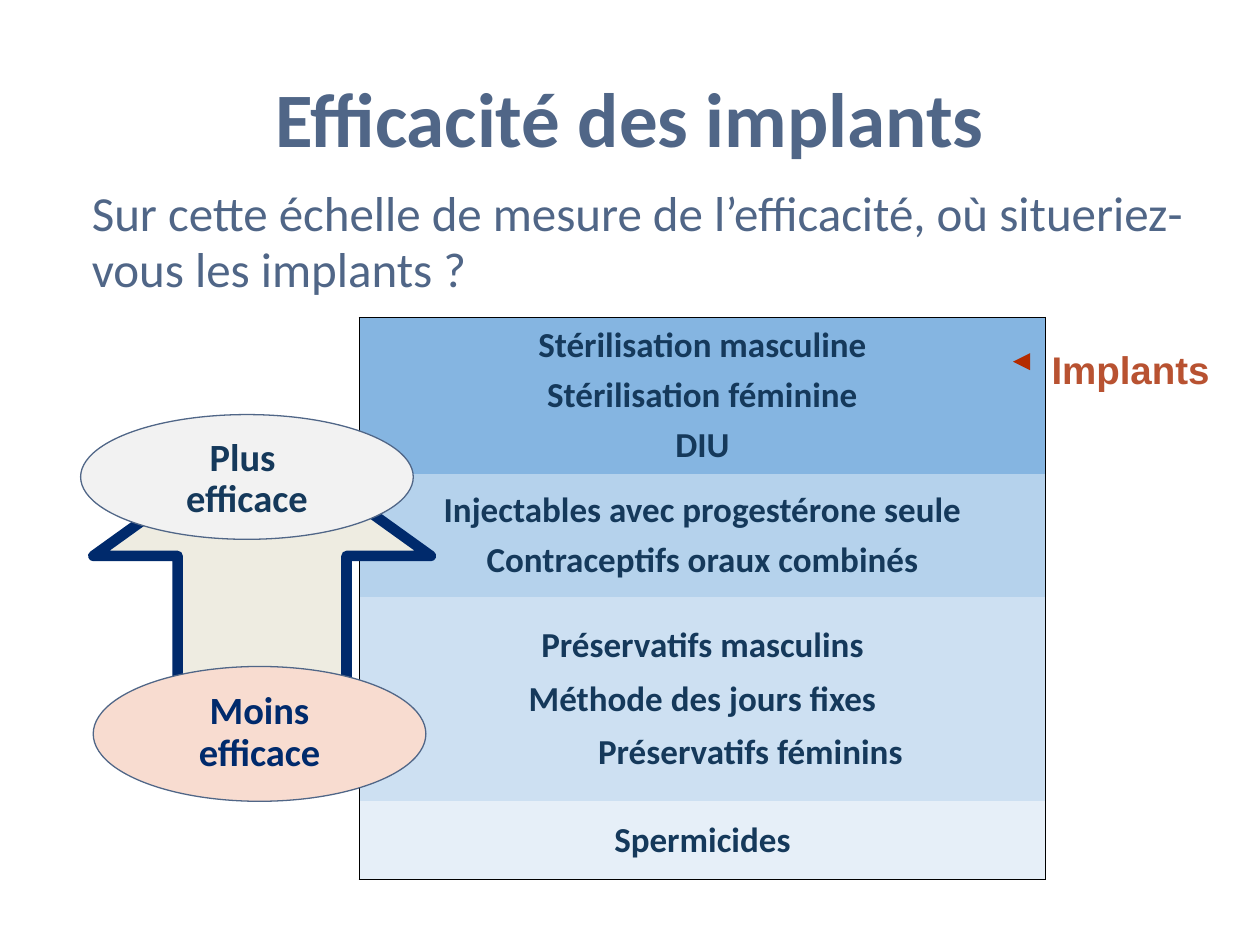
import pptx
import pptx.util
import pptx.dml.color
import pptx.enum.shapes
import pptx.enum.text
import pptx.oxml
import pptx.oxml.ns
import lxml.etree

WIDE, HIGH = 10, 7.5
NAVY, SLATE, INK = "002A6C", "506687", "15395B"
KIND = pptx.enum.shapes.MSO_SHAPE
MID = pptx.enum.text.PP_ALIGN.CENTER
ANCHOR = pptx.enum.text.MSO_ANCHOR
qn = pptx.oxml.ns.qn


def tint(code):
    """Turn a hex string into a colour."""
    return pptx.dml.color.RGBColor.from_string(code)


def across(share):
    """Give a percentage of the slide's width."""
    return pptx.util.Inches(WIDE * share / 100)


def down(share):
    """Give a percentage of the slide's height."""
    return pptx.util.Inches(HIGH * share / 100)


def place(box):
    """Turn left, top, width and height shares into lengths."""
    left, top, width, height = box
    return across(left), down(top), across(width), down(height)


def write(para, text, size, code, bold=True, face="Calibri"):
    """Add one run to a paragraph."""
    run = para.add_run()
    run.text = text
    font = run.font
    font.size, font.bold, font.name = pptx.util.Pt(size), bold, face
    font.color.rgb = tint(code)


def label(slide, box, anchor=ANCHOR.TOP):
    """Add a wrapping text box and return its first paragraph."""
    frame = slide.shapes.add_textbox(*place(box)).text_frame
    frame.word_wrap = True
    frame.vertical_anchor = anchor
    return frame.paragraphs[0]


def solid(slide, kind, box, fill, line, weight):
    """Add a filled and outlined preset shape."""
    shape = slide.shapes.add_shape(kind, *place(box))
    shape.shadow.inherit = False
    shape.fill.solid()
    shape.fill.fore_color.rgb = tint(fill)
    shape.line.color.rgb = tint(line)
    shape.line.width = pptx.util.Pt(weight)
    return shape


def oval(slide, box, fill, words, code):
    """Add an ellipse with words on two lines."""
    shape = solid(slide, KIND.OVAL, box, fill, SLATE, 0.75)
    frame = shape.text_frame
    frame.word_wrap = True
    frame.vertical_anchor = ANCHOR.TOP
    frame.margin_left = frame.margin_right = pptx.util.Inches(0.07)
    frame.margin_top = frame.margin_bottom = pptx.util.Inches(0.04)
    para = frame.paragraphs[0]
    para.alignment, para.line_spacing = MID, 0.9
    write(para, words[0], 22, code)
    para.add_line_break()
    write(para, words[1], 22, code)


def edge(cell, shown):
    """Draw the named sides of a cell and hide the others."""
    props = cell._tc.get_or_add_tcPr()
    for spot, side in enumerate("LRTB"):
        line = lxml.etree.Element(qn(f"a:ln{side}"), w="9525")
        if side in shown:
            fill = lxml.etree.SubElement(line, qn("a:solidFill"))
            lxml.etree.SubElement(fill, qn("a:srgbClr"), val="000000")
        else:
            lxml.etree.SubElement(line, qn("a:noFill"))
        props.insert(spot, line)


def scale(slide, left, top, width, bands):
    """Add the ranked table, one band per row."""
    total = sum(band[0] for band in bands)
    box = place((left, top, width, total))
    table = slide.shapes.add_table(len(bands), 1, *box).table
    table.first_row = table.horz_banding = False
    for row, (height, fill, gap, lines) in enumerate(bands):
        table.rows[row].height = down(height)
        cell = table.cell(row, 0)
        cell.fill.solid()
        cell.fill.fore_color.rgb = tint(fill)
        cell.vertical_anchor = ANCHOR.MIDDLE
        top_side = "T" if row == 0 else ""
        base = "B" if row == len(bands) - 1 else ""
        edge(cell, "LR" + top_side + base)
        frame = cell.text_frame
        for spot, (text, inset) in enumerate(lines):
            para = frame.add_paragraph() if spot else frame.paragraphs[0]
            para.alignment = MID
            if spot:
                para.space_before = pptx.util.Pt(gap)
            if inset:
                para._p.get_or_add_pPr().set("marL", str(across(inset)))
            write(para, text, 20, INK)


def pointer(slide, start, end, level, code):
    """Add a level line that ends in a triangle."""
    line = slide.shapes.add_connector(
        pptx.enum.shapes.MSO_CONNECTOR.STRAIGHT,
        across(start), down(level), across(end), down(level))
    line.line.color.rgb = tint(code)
    line.line.width = pptx.util.Pt(3.25)
    stroke = line.line._get_or_add_ln()
    lxml.etree.SubElement(stroke, qn("a:tailEnd"), type="triangle")
    lxml.etree.SubElement(line._element.spPr, qn("a:effectLst"))


def main():
    """Build and save the slide."""
    deck = pptx.Presentation()
    deck.slide_width, deck.slide_height = across(100), down(100)
    slide = deck.slides.add_slide(deck.slide_layouts[6])

    title = label(slide, (5, 4, 90, 16.67), ANCHOR.MIDDLE)
    title.alignment = MID
    write(title, "Efficacité des implants", 44, SLATE)
    ask = label(slide, (6.3, 19.07, 89.2, 13.2))
    ask.line_spacing = 0.95
    write(ask, "Sur cette échelle de mesure de l’efficacité, "
          "où situeriez-vous les implants ?", 28, SLATE, False)

    scale(slide, 28.5, 33.6, 54.5, [
        (16.53, "85B5E1", 4, [("Stérilisation masculine", 0),
                              ("Stérilisation féminine", 0), ("DIU", 0)]),
        (13.07, "B5D2EC", 4, [("Injectables avec progestérone seule", 0),
                              ("Contraceptifs oraux combinés", 0)]),
        (21.6, "CDE0F2", 6, [("Préservatifs masculins", 0),
                             ("Méthode des jours fixes", 0),
                             ("Préservatifs féminins", 7.6)]),
        (8.27, "E6EFF8", 0, [("Spermicides", 0)]),
    ])

    arrow = solid(slide, KIND.RIGHT_ARROW, (7.8, 45.47, 26, 35.73),
                  "EEECE1", NAVY, 6)
    arrow.rotation = 270
    arrow.adjustments[0], arrow.adjustments[1] = 0.5, 0.37
    oval(slide, (6.4, 43.87, 26.4, 13.2), "F2F2F2", ("Plus ", "efficace"), INK)
    oval(slide, (7.4, 70.53, 26.4, 14.27), "F8DCD0", ("Moins", "efficace"), NAVY)

    mark = label(slide, (81.7, 36, 17.3, 6.27))
    write(mark, " ", 20, "B85231", face="Arial")
    write(mark, "Implants", 22, "B85231", face="Arial")
    pointer(slide, 81.7, 80.4, 38.27, "B42B00")
    deck.save("out.pptx")


if __name__ == "__main__":
    main()
